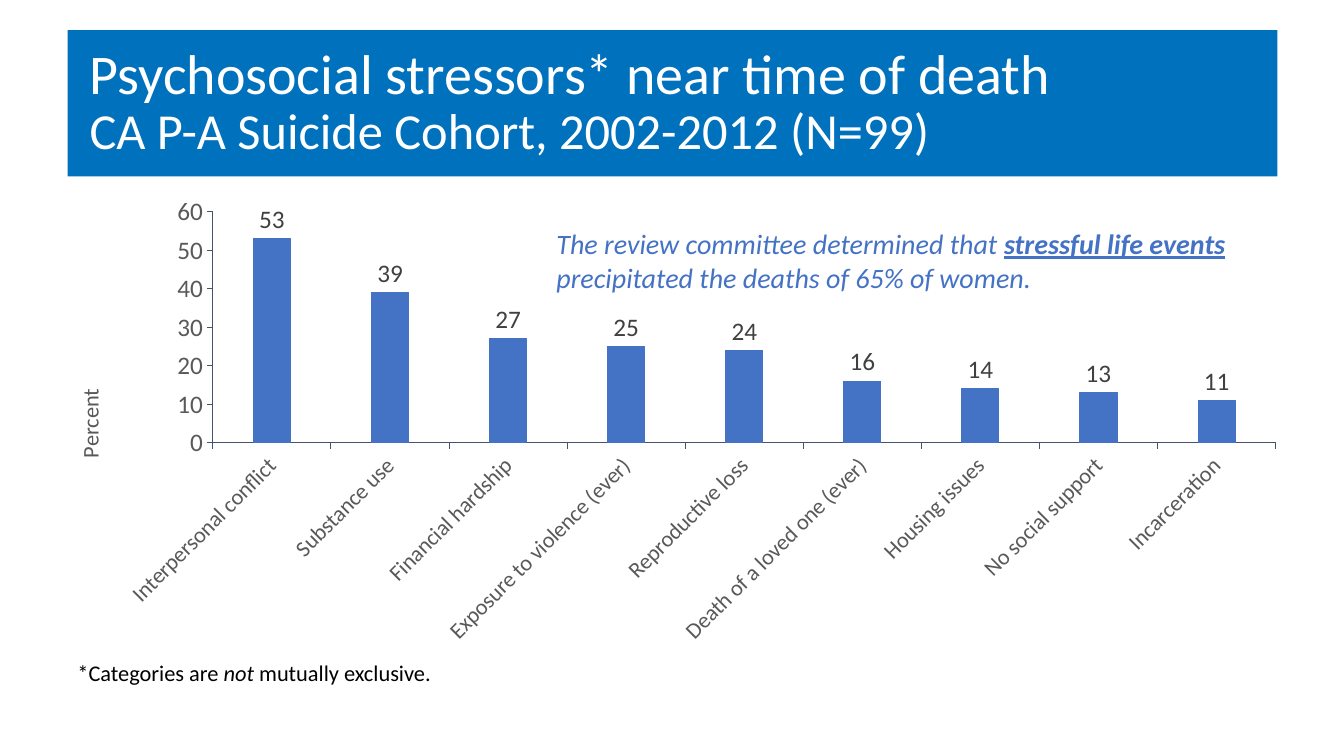
"""Build a slide charting psychosocial stressors near time of death."""
import pptx
import pptx.util
import pptx.dml.color
import pptx.chart.data
import pptx.enum.chart
import pptx.enum.shapes
import pptx.enum.text
import pptx.oxml
import pptx.oxml.ns

Inches, Pt = pptx.util.Inches, pptx.util.Pt
CHART = pptx.enum.chart
BLUE, BAND, GREY, DARK, AXIS = "4472C4", "0071BC", "595959", "404040", "44546A"

STRESS = {
    "Interpersonal conflict": 53,
    "Substance use": 39,
    "Financial hardship": 27,
    "Exposure to violence (ever)": 25,
    "Reproductive loss": 24,
    "Death of a loved one (ever)": 16,
    "Housing issues": 14,
    "No social support": 13,
    "Incarceration": 11,
}
TITLE = [
    ("Psychosocial stressors* near time of death", {"size": Pt(40)}),
    ("CA P-A Suicide Cohort, 2002-2012 (N=99)", {"size": Pt(36)}),
]
NOTE = [
    ("*Categories are ", {}),
    ("not ", {"italic": True}),
    ("mutually exclusive.", {}),
]
QUOTE = [
    ("The review committee determined that ", {}),
    ("stressful life events", {"bold": True, "underline": True}),
    (" precipitated the deaths of 65% of women.", {}),
]
BOX = (0.43, 1.86, 12.46, 4.64)
PLOT = (2.11, 2.1, 10.54, 2.29)
LABEL = (0.71, 3.82)


def color(code):
    return pptx.dml.color.RGBColor.from_string(code)


def style(font, code, **form):
    font.name = "Calibri"
    font.color.rgb = color(code)
    for key, val in form.items():
        setattr(font, key, val)


def write(frame, runs, code, split=False, **base):
    frame.word_wrap = True
    para = frame.paragraphs[0]
    for i, (text, form) in enumerate(runs):
        if split and i:
            para.add_line_break()
        run = para.add_run()
        run.text = text
        style(run.font, code, **{**base, **form})
    return para


def layout(parts):
    tags = "".join(f'<c:{tag} val="{val}"/>' for tag, val in parts)
    space = pptx.oxml.ns.nsdecls("c")
    return pptx.oxml.parse_xml(
        f"<c:layout {space}><c:manualLayout>{tags}</c:manualLayout></c:layout>")


def place(node, parts):
    for old in node.findall(pptx.oxml.ns.qn("c:layout")):
        node.remove(old)
    return layout(parts)


def edges(spot):
    left, top, wide, high = BOX
    return [("xMode", "edge"), ("yMode", "edge"),
            ("x", round((spot[0] - left) / wide, 3)),
            ("y", round((spot[1] - top) / high, 3))]


def draw(slide):
    data = pptx.chart.data.CategoryChartData(number_format="0")
    data.categories = list(STRESS)
    data.add_series("Series 1", list(STRESS.values()))
    chart = slide.shapes.add_chart(
        CHART.XL_CHART_TYPE.COLUMN_CLUSTERED, *map(Inches, BOX), data).chart
    chart.has_legend = chart.has_title = False
    style(chart.font, "000000", size=Pt(10))

    plot = chart.plots[0]
    for key, val in {"gap_width": 219, "overlap": -27,
                     "vary_by_categories": False, "has_data_labels": True}.items():
        setattr(plot, key, val)
    tags = plot.data_labels
    for key, val in {"show_value": True, "number_format": "0",
                     "number_format_is_linked": False,
                     "position": CHART.XL_LABEL_POSITION.OUTSIDE_END}.items():
        setattr(tags, key, val)
    style(tags.font, DARK, size=Pt(18))
    bars = plot.series[0].format
    bars.fill.solid()
    bars.fill.fore_color.rgb = color(BLUE)
    bars.line.color.rgb = color(BLUE)
    bars.line.width = Pt(0.75)

    cats, vals = chart.category_axis, chart.value_axis
    for axis, size in ((cats, 16), (vals, 18)):
        for key, val in {"has_major_gridlines": False,
                         "major_tick_mark": CHART.XL_TICK_MARK.OUTSIDE,
                         "minor_tick_mark": CHART.XL_TICK_MARK.NONE}.items():
            setattr(axis, key, val)
        axis.format.line.color.rgb = color(AXIS)
        axis.format.line.width = Pt(0.75)
        style(axis.tick_labels.font, GREY, size=Pt(size))
    turn = cats._element.find(".//" + pptx.oxml.ns.qn("a:bodyPr"))
    turn.set("rot", "-2700000")
    turn.set("vert", "horz")
    for key, val in {"minimum_scale": 0, "maximum_scale": 60, "major_unit": 10}.items():
        setattr(vals, key, val)
    vals.tick_labels.number_format = "0"
    vals.tick_labels.number_format_is_linked = False

    title = vals.axis_title
    write(title.text_frame, [("Percent", {})], GREY, size=Pt(16), bold=False)
    turn = title._element.find(".//" + pptx.oxml.ns.qn("a:bodyPr"))
    turn.set("rot", "-5400000")
    turn.set("vert", "horz")
    node = title._element
    spot = place(node, edges(LABEL))
    node.find(pptx.oxml.ns.qn("c:tx")).addnext(spot)

    area = chart._chartSpace.find(".//" + pptx.oxml.ns.qn("c:plotArea"))
    size = [("w", round(PLOT[2] / BOX[2], 3)), ("h", round(PLOT[3] / BOX[3], 3))]
    area.insert(0, place(area, [("layoutTarget", "inner")] + edges(PLOT) + size))


def main():
    deck = pptx.Presentation()
    deck.slide_width, deck.slide_height = Inches(13.33), Inches(7.5)
    slide = deck.slides.add_slide(deck.slide_layouts[6])

    band = slide.shapes.add_shape(pptx.enum.shapes.MSO_SHAPE.RECTANGLE,
                                  *map(Inches, (0.67, 0.3, 12, 1.45)))
    band.shadow.inherit = False
    band.fill.solid()
    band.fill.fore_color.rgb = color(BAND)
    band.line.fill.background()
    band.text_frame.vertical_anchor = pptx.enum.text.MSO_ANCHOR.MIDDLE
    head = write(band.text_frame, TITLE, "FFFFFF", split=True)
    head.alignment = pptx.enum.text.PP_ALIGN.LEFT
    head.line_spacing = 0.9
    head._p.get_or_add_pPr().set("marL", str(Inches(0.12)))

    draw(slide)
    for spot, runs, code, form in (
            ((0.67, 6.49, 5.63, 0.37), NOTE, "000000", {"size": Pt(16)}),
            ((5.42, 2.2, 7.25, 0.77), QUOTE, BLUE, {"size": Pt(20), "italic": True})):
        text = slide.shapes.add_textbox(*map(Inches, spot))
        write(text.text_frame, runs, code, **form)
    deck.save("out.pptx")


if __name__ == "__main__":
    main()
